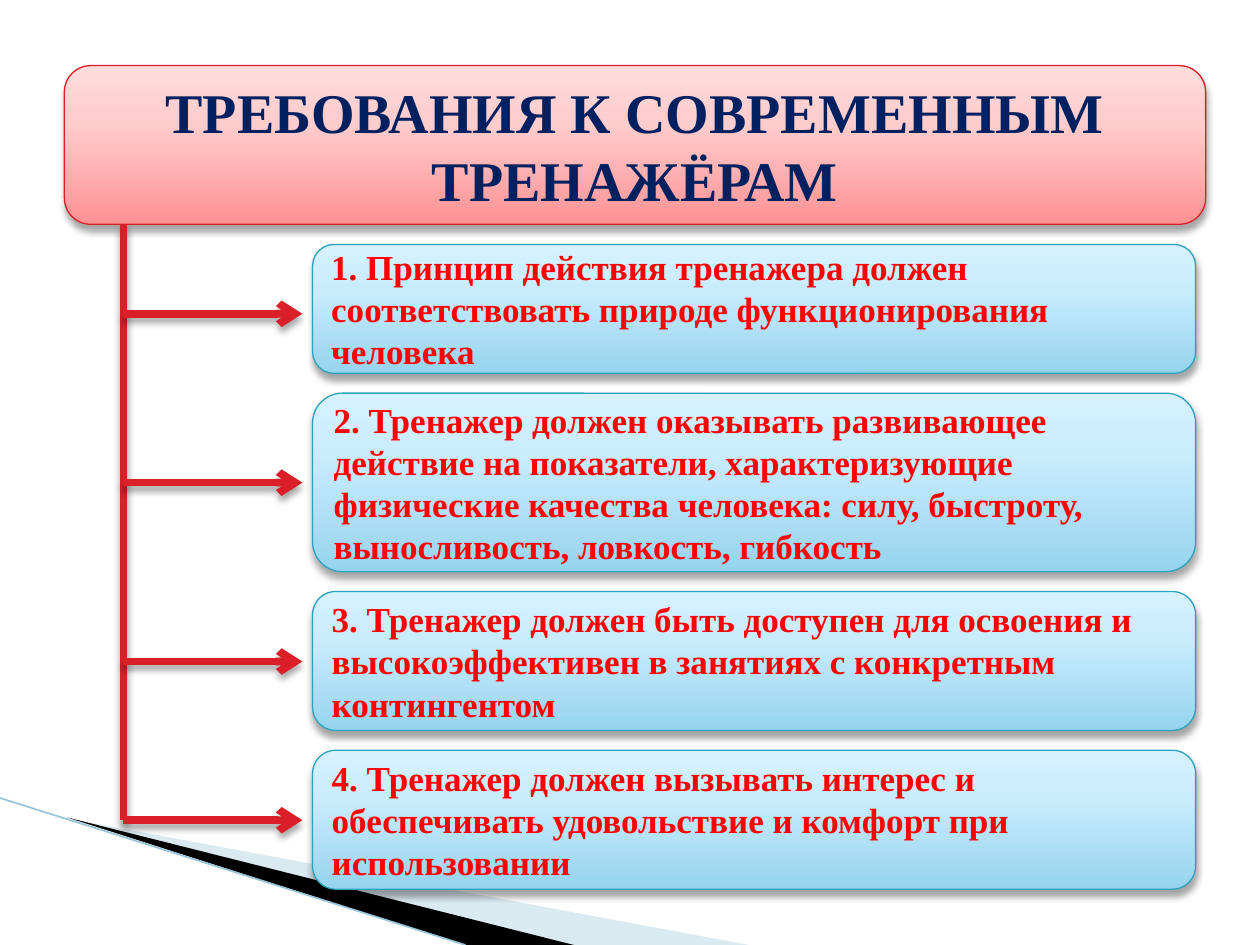
from pptx import Presentation
from pptx.dml.color import RGBColor
from pptx.enum.shapes import MSO_CONNECTOR as Connector, MSO_SHAPE as Shape
from pptx.enum.text import MSO_ANCHOR as Anchor, PP_ALIGN as Align
from pptx.oxml import parse_xml
from pptx.oxml.ns import nsdecls
from pptx.util import Pt

FONT = "Times New Roman"
RED = "DA1F28"
PINK_STOPS = ((0, "FF9294"), (65, "FFCDCD"), (100, "FFDCDC"))
BLUE_STOPS = ((0, "96D4EE"), (65, "C9ECFC"), (100, "D7F2FF"))
TRUNK_X, ARROW_END = 70.5, 172.8
BOX_LEFT, BOX_WIDTH, BOX_TOP, BOX_GAP = 178.6, 504.6, 139.7, 11.3
REQUIREMENTS = (
    (73.7, 179.3, "1. Принцип действия тренажера должен соответствовать природе "
     "функционирования человека"),
    (102, 275.8, "2. Тренажер должен оказывать развивающее действие на показатели, "
     "характеризующие физические качества человека: силу, быстроту, "
     "выносливость, ловкость, гибкость"),
    (79.4, 378, "3. Тренажер должен быть доступен для освоения и высокоэффективен "
     "в занятиях с конкретным контингентом"),
    (79.4, 468.7, "4. Тренажер должен вызывать интерес и обеспечивать удовольствие "
     "и комфорт при использовании"),
)


def color(value):
    return RGBColor.from_string(value)


def element(tag, content="", attributes=""):
    return parse_xml(f"<a:{tag} {nsdecls('a')} {attributes}>{content}</a:{tag}>")


class SlideBuilder:
    """Draws styled elements on the current slide, with lengths in points."""

    def __init__(self, page):
        self.page = page

    def shadow(self, item, visible=True):
        content = (
            f'<a:outerShdw blurRad="{Pt(4)}" dist="{Pt(3)}" dir="5400000" rotWithShape="0">'
            '<a:srgbClr val="000000"><a:alpha val="35000"/></a:srgbClr></a:outerShdw>'
        )
        item._element.spPr.append(element("effectLst", content if visible else ""))

    def label(self, shape, text, size, ink, align):
        frame = shape.text_frame
        frame.word_wrap = True
        frame.vertical_anchor = Anchor.MIDDLE
        para = frame.paragraphs[0]
        para.text = text
        para.alignment = align
        para.font.name = FONT
        para.font.size = Pt(size)
        para.font.bold = True
        para.font.color.rgb = color(ink)

    def panel(self, left, top, width, height, stops, outline):
        box = self.page.shapes.add_shape(
            Shape.ROUNDED_RECTANGLE, Pt(left), Pt(top), Pt(width), Pt(height))
        box.line.color.rgb = color(outline)
        box.line.width = Pt(0.75)
        marks = "".join(
            f'<a:gs pos="{place * 1000}"><a:srgbClr val="{tint}"/></a:gs>'
            for place, tint in stops)
        gradient = element(
            "gradFill", f'<a:gsLst>{marks}</a:gsLst><a:lin ang="16200000" scaled="0"/>')
        box._element.spPr.insert(2, gradient)
        self.shadow(box)
        return box

    def title(self, left, top, width, height, text):
        box = self.panel(left, top, width, height, PINK_STOPS, RED)
        title = self.page.shapes.title
        title.left, title.top, title.width, title.height = (
            box.left, box.top, box.width, box.height)
        self.label(title, text, 32, "002060", Align.CENTER)
        box._element.addnext(title._element)

    def line(self, start, end, ink=RED, width=4.33, arrow=False, shadow=True):
        line = self.page.shapes.add_connector(
            Connector.STRAIGHT, *(Pt(value) for value in start + end))
        line.line.color.rgb = color(ink)
        line.line.width = Pt(width)
        if arrow:
            outline = line._element.spPr.find("{*}ln")
            outline.append(element("tailEnd", attributes='type="arrow"'))
        self.shadow(line, shadow)

    def wedge(self, points, tint, alpha=100):
        start, *rest = points
        outline = self.page.shapes.build_freeform(*start, scale=Pt(1))
        outline.add_line_segments(rest)
        shape = outline.convert_to_shape()
        shape.fill.solid()
        shape.fill.fore_color.rgb = color(tint)
        solid = shape._element.spPr.find(".//{*}srgbClr")
        solid.append(element("alpha", attributes=f'val="{alpha * 1000}"'))
        shape.line.fill.background()
        shape.shadow.inherit = False


def main():
    deck = Presentation()
    deck.slide_width, deck.slide_height = Pt(720), Pt(540)
    slide = SlideBuilder(deck.slides.add_slide(deck.slide_layouts[5]))

    slide.wedge(((40, 468), (428, 540), (328, 540)), "A0CBDC", 40)
    slide.wedge(((38, 467), (328, 540), (266, 540)), "000000")
    slide.line((0, 456), (266, 540), "97C5D8", 0.95, shadow=False)

    slide.title(36.8, 37.5, 652.2, 90.7, "ТРЕБОВАНИЯ К СОВРЕМЕННЫМ ТРЕНАЖЁРАМ")
    slide.line((TRUNK_X, 128.2), (TRUNK_X, REQUIREMENTS[-1][1]))
    top = BOX_TOP
    for height, arrow_y, text in REQUIREMENTS:
        slide.line((TRUNK_X, arrow_y), (ARROW_END, arrow_y), arrow=True)
        box = slide.panel(BOX_LEFT, top, BOX_WIDTH, height, BLUE_STOPS, "2DA2BF")
        slide.label(box, text, 20, "FF0000", Align.LEFT)
        top += height + BOX_GAP
    deck.save("out.pptx")


if __name__ == "__main__":
    main()
